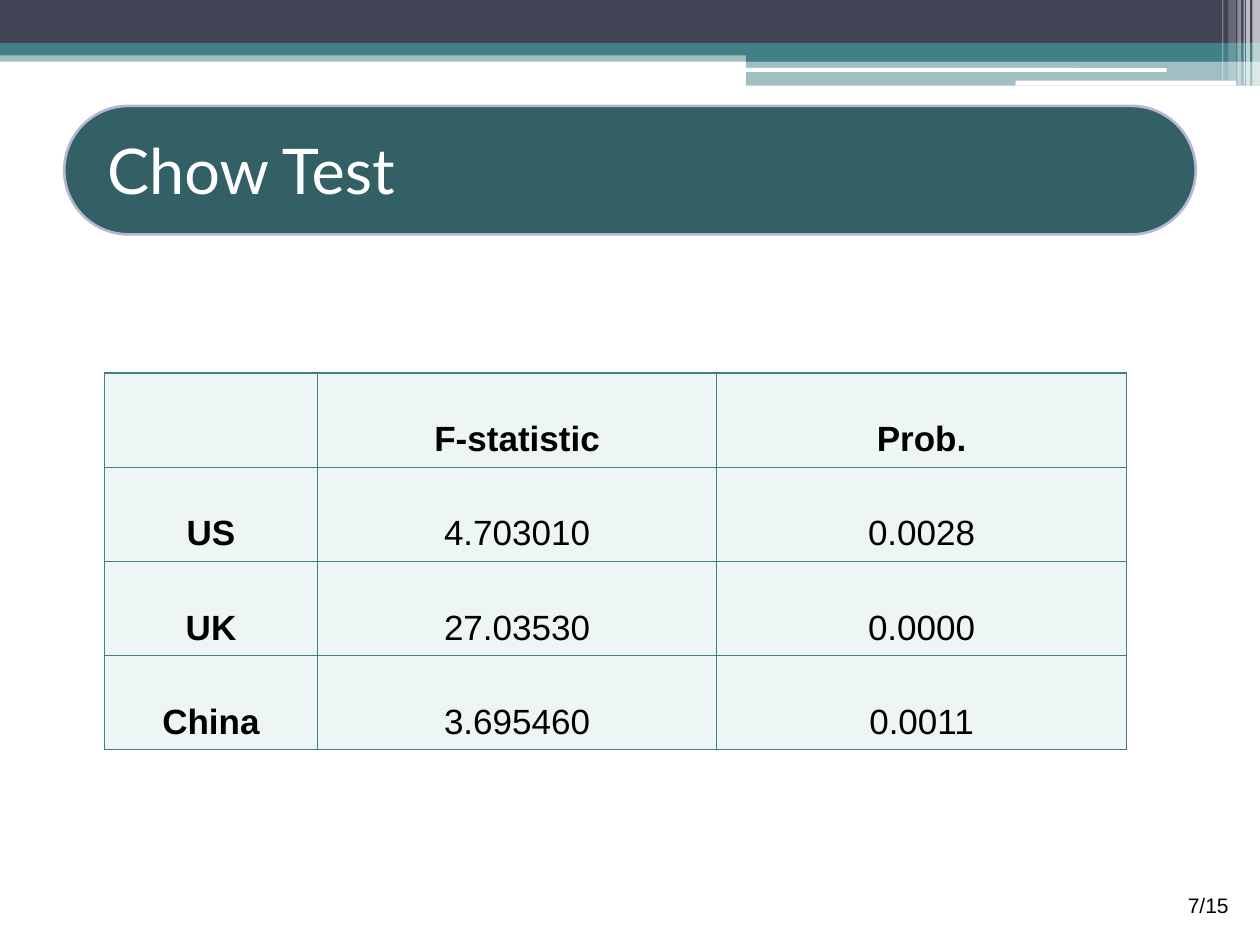
import pptx
import pptx.dml.color
import pptx.enum.shapes
import pptx.enum.text
import pptx.oxml
import pptx.oxml.ns
import pptx.util
from lxml import etree

WIDTH, HEIGHT = 10, 7.5
TEAL, NAVY, WHITE, BLACK = "438086", "424456", "FFFFFF", "000000"
PILL, PILL_EDGE, CELL = "326065", "B7B7D4", "EDF5F5"

# Boxes are left, top, width, height in percent of the slide.
BANDS = [
    ((0, 5.33, 100, 1.2), TEAL, 50),
    ((0, 0, 100, 4.53), NAVY, 100),
    ((0, 4.53, 100, 1.33), TEAL, 100),
    ((59.2, 5.2, 40.8, 1.33), TEAL, 100),
    ((59.2, 6.4, 40.8, 2.67), TEAL, 50),
]
SLOTS = [(59.1, 7.2, 33.5, 0.4), (80.6, 8.53, 17.5, 0.53)]
STRIPES = [
    (99.4, 0.6, 9.07, 65), (98.9, 0.3, 9.07, 65), (98.7, 0.1, 9.07, 60),
    (98.2, 0.3, 9.07, 40), (97.5, 0.6, 8.53, 20), (97, 0.1, 8.53, 30),
]
PILL_BOX = (5.1, 11.2, 89.8, 13.6)
TITLE_BOX = (7.5, 13.2, 90, 9.47)
NUMBER_BOX = (75.2, 93.07, 23.3, 5.33)
TABLE_BOX = (8.3, 39.47, 81.1, 39.87)
COLUMNS = [16.9, 31.7, 32.5]
ROWS = [
    ("", "F-statistic", "Prob."),
    ("US", "4.703010", "0.0028"),
    ("UK", "27.03530", "0.0000"),
    ("China", "3.695460", "0.0011"),
]
ALIGN = pptx.enum.text.PP_ALIGN
KIND = pptx.enum.shapes.MSO_SHAPE
MIDDLE = pptx.enum.text.MSO_ANCHOR.MIDDLE


def rgb(value):
    """Return a colour from a hex string."""
    return pptx.dml.color.RGBColor.from_string(value)


def place(box):
    """Turn percentages of the slide into lengths."""
    return [pptx.util.Inches(v * side / 100)
            for v, side in zip(box, (WIDTH, HEIGHT) * 2)]


def add_block(s, box, color, alpha=100, kind=KIND.RECTANGLE, edge=None):
    """Add a filled preset shape, see-through when alpha is below 100."""
    sp = s.shapes.add_shape(kind, *place(box))
    sp.shadow.inherit = False
    sp.fill.solid()
    sp.fill.fore_color.rgb = rgb(color)
    if alpha < 100:
        clr = sp.element.spPr.find(".//" + pptx.oxml.ns.qn("a:srgbClr"))
        etree.SubElement(clr, pptx.oxml.ns.qn("a:alpha"), val=str(alpha * 1000))
    if edge:
        sp.line.color.rgb = rgb(edge)
        sp.line.width = pptx.util.Pt(1.5)
    else:
        sp.line.fill.background()
    return sp


def write(tf, text, size, font, color, align, bold=False):
    """Put one formatted run in the first paragraph and return the paragraph."""
    p = tf.paragraphs[0]
    p.alignment = align
    r = p.add_run()
    r.text = text
    r.font.size = pptx.util.Pt(size)
    r.font.name = font
    r.font.bold = bold
    r.font.color.rgb = rgb(color)
    return p


def add_borders(cell):
    """Draw a thin teal line on all four sides of a cell."""
    tc_pr = cell._tc.get_or_add_tcPr()
    for i, side in enumerate(("lnL", "lnR", "lnT", "lnB")):
        tc_pr.insert(i, pptx.oxml.parse_xml(
            f'<a:{side} {pptx.oxml.ns.nsdecls("a")} w="9525"><a:solidFill>'
            f'<a:srgbClr val="{TEAL}"/></a:solidFill></a:{side}>'))


def add_results(s):
    """Add the table of test results."""
    box = place(TABLE_BOX)
    table = s.shapes.add_table(len(ROWS), len(COLUMNS), *box).table
    for column, share in zip(table.columns, COLUMNS):
        column.width = pptx.util.Inches(share * WIDTH / 100)
    for i, row in enumerate(ROWS):
        table.rows[i].height = box[3] // len(ROWS)
        for j, text in enumerate(row):
            cell = table.cell(i, j)
            cell.fill.solid()
            cell.fill.fore_color.rgb = rgb(CELL)
            cell.vertical_anchor = MIDDLE
            cell.margin_left = cell.margin_right = pptx.util.Inches(0.07)
            cell.margin_top = cell.margin_bottom = pptx.util.Inches(0.02)
            add_borders(cell)
            if text:
                p = write(cell.text_frame, text, 20, "Arial", BLACK,
                          ALIGN.CENTER, bold=i == 0 or j == 0)
                p.line_spacing = 2.0


def main():
    """Build the slide and save it."""
    prs = pptx.Presentation()
    prs.slide_width = pptx.util.Inches(WIDTH)
    prs.slide_height = pptx.util.Inches(HEIGHT)
    s = prs.slides.add_slide(prs.slide_layouts[5])
    for box, color, alpha in BANDS:
        add_block(s, box, color, alpha)
    for box in SLOTS:
        add_block(s, box, WHITE, kind=KIND.ROUNDED_RECTANGLE)
    for left, width, height, alpha in STRIPES:
        add_block(s, (left, 0, width, height), WHITE, alpha)
    pill = add_block(s, PILL_BOX, PILL, kind=KIND.ROUNDED_RECTANGLE, edge=PILL_EDGE)
    pill.adjustments[0] = 0.5

    title = s.shapes.title
    s.shapes.element.append(title.element)
    title.left, title.top, title.width, title.height = place(TITLE_BOX)
    title.text_frame.vertical_anchor = MIDDLE
    write(title.text_frame, "Chow Test", 36, "Lato", WHITE, ALIGN.LEFT)

    tf = s.shapes.add_textbox(*place(NUMBER_BOX)).text_frame
    tf.word_wrap = True
    tf.vertical_anchor = MIDDLE
    write(tf, "7/15", 12, "Arial", BLACK, ALIGN.RIGHT)

    add_results(s)
    prs.save("out.pptx")


if __name__ == "__main__":
    main()
